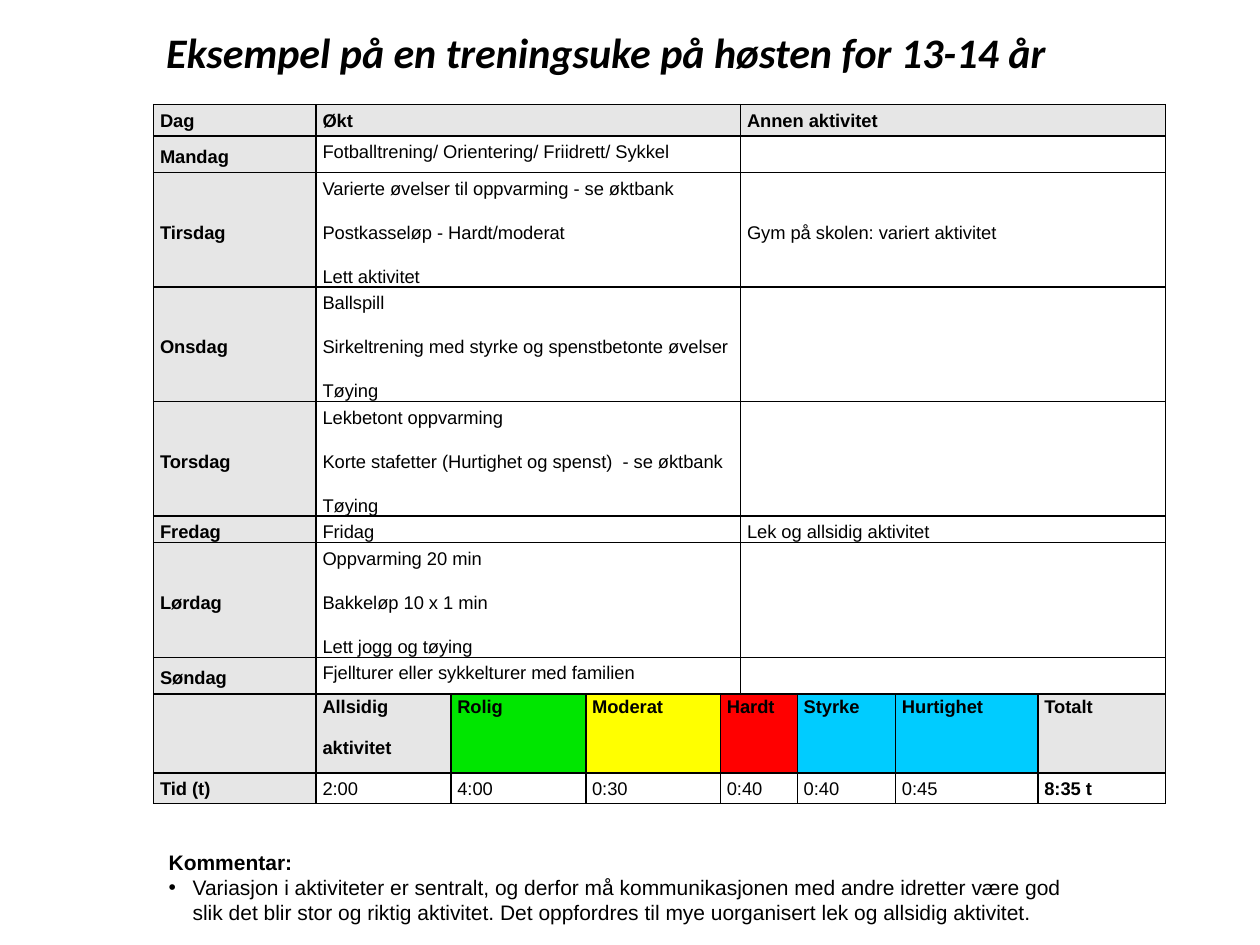
from lxml.etree import SubElement
from pptx import Presentation
from pptx.dml.color import RGBColor
from pptx.enum.text import MSO_ANCHOR as Anchor, PP_ALIGN as Align
from pptx.oxml.ns import qn
from pptx.util import Inches, Pt

GREY = "E6E6E6"
COLUMN_WIDTHS = [1.29, 1.07, 1.07, 1.07, 0.16, 0.45, 0.78, 1.13, 1.01]
DAYS = [
    ("Mandag", 0.29, ["Fotballtrening/ Orientering/ Friidrett/ Sykkel"], ""),
    ("Tirsdag", 0.76, ["Varierte øvelser til oppvarming - se øktbank",
                       "Postkasseløp - Hardt/moderat", "Lett aktivitet "],
     "Gym på skolen: variert aktivitet"),
    ("Onsdag", 0.76, ["Ballspill", "Sirkeltrening med styrke og spenstbetonte øvelser",
                      "Tøying"], ""),
    ("Torsdag", 0.76, ["Lekbetont oppvarming",
                       "Korte stafetter (Hurtighet og spenst)  - se øktbank",
                       "Tøying"], ""),
    ("Fredag", 0.14, ["Fridag"], "Lek og allsidig aktivitet"),
    ("Lørdag", 0.61, ["Oppvarming 20 min", "Bakkeløp 10 x 1 min",
                      "Lett jogg og tøying"], ""),
    ("Søndag", 0.29, ["Fjellturer eller sykkelturer med familien"], ""),
]
INTENSITIES = [
    (1, ["Allsidig", "aktivitet"], GREY, "2:00"),
    (2, ["Rolig"], "00E600", "4:00"),
    (3, ["Moderat"], "FFFF00", "0:30"),
    (4, ["Hardt"], "FF0000", "0:40"),
    (6, ["Styrke"], "00CCFF", "0:40"),
    (7, ["Hurtighet"], "00CCFF", "0:45"),
    (8, ["Totalt"], GREY, "8:35 t"),
]


def color(hex_code):
    return RGBColor.from_string(hex_code)


def write(paragraph, text, size, font="Arial", bold=False, italic=False,
          align=Align.LEFT, line_spacing=None, space_before=None):
    paragraph.alignment = align
    paragraph.line_spacing = line_spacing
    if space_before is not None:
        paragraph.space_before = Pt(space_before)
    run = paragraph.add_run()
    run.text = text
    run.font.size = Pt(size)
    run.font.name = font
    run.font.bold = bold
    run.font.italic = italic
    run.font.color.rgb = color("000000")


def prepare_cell(cell):
    cell.margin_left = cell.margin_right = Inches(0.05)
    cell.margin_top = cell.margin_bottom = 0
    properties = cell._tc.get_or_add_tcPr()
    for side in ("lnL", "lnR", "lnT", "lnB"):
        border = SubElement(properties, qn(f"a:{side}"), w=str(Pt(1)))
        ink = SubElement(border, qn("a:solidFill"))
        SubElement(ink, qn("a:srgbClr"), val="000000")
    cell.fill.background()
    empty_text = cell.text_frame.paragraphs[0]._p
    SubElement(empty_text, qn("a:endParaRPr"), sz="1050")


def fill_cell(cell, lines, fill=None, anchor=Anchor.TOP, bold=False, line_spacing=1.3):
    if fill:
        cell.fill.solid()
        cell.fill.fore_color.rgb = color(fill)
    cell.vertical_anchor = anchor
    frame = cell.text_frame
    for index, line in enumerate(lines):
        paragraph = frame.add_paragraph() if index else frame.paragraphs[0]
        write(paragraph, line, 10.5, bold=bold, align=Align.JUSTIFY,
              line_spacing=line_spacing, space_before=10)


def add_week_table(slide, left, top, width, height):
    row_heights = [0.25] + [day[1] for day in DAYS] + [0.63, 0.24]
    week = slide.shapes.add_table(len(row_heights), len(COLUMN_WIDTHS),
                                  left, top, width, height).table
    week.first_row = week.horz_banding = False
    for column, column_width in zip(week.columns, COLUMN_WIDTHS):
        column.width = Inches(column_width)
    for row, row_height in zip(week.rows, row_heights):
        row.height = Inches(row_height)
    for cell in week.iter_cells():
        prepare_cell(cell)

    intensity_row = len(DAYS) + 1
    time_row = intensity_row + 1
    for row in range(intensity_row):
        week.cell(row, 1).merge(week.cell(row, 4))
        week.cell(row, 5).merge(week.cell(row, 8))
    for row in (intensity_row, time_row):
        week.cell(row, 4).merge(week.cell(row, 5))

    for column, heading in ((0, "Dag"), (1, "Økt "), (5, "Annen aktivitet")):
        fill_cell(week.cell(0, column), [heading], GREY, bold=True)
    for row, (day, _, sessions, other) in enumerate(DAYS, 1):
        fill_cell(week.cell(row, 0), [day], GREY, Anchor.MIDDLE, bold=True)
        fill_cell(week.cell(row, 1), sessions)
        if other:
            fill_cell(week.cell(row, 5), [other], anchor=Anchor.MIDDLE)

    fill_cell(week.cell(intensity_row, 0), [], GREY)
    fill_cell(week.cell(time_row, 0), ["Tid (t)"], GREY, bold=True)
    for column, label, fill, duration in INTENSITIES:
        fill_cell(week.cell(intensity_row, column), label, fill, bold=True,
                  line_spacing=1.15)
        fill_cell(week.cell(time_row, column), [duration], bold=label == ["Totalt"])


def add_title(slide, left, top, width, height):
    frame = slide.shapes.add_textbox(left, top, width, height).text_frame
    frame.word_wrap = True
    write(frame.paragraphs[0], "Eksempel på en treningsuke på høsten for 13-14 år",
          24, font="Calibri", bold=True, italic=True)


def add_comment(slide, left, top, width, height):
    frame = slide.shapes.add_textbox(left, top, width, height).text_frame
    frame.word_wrap = True
    write(frame.paragraphs[0], "Kommentar:", 12, bold=True)
    advice = frame.add_paragraph()
    write(advice, "Variasjon i aktiviteter er sentralt, og derfor må kommunikasjonen "
          "med andre idretter være god slik det blir stor og riktig aktivitet. "
          "Det oppfordres til mye uorganisert lek og allsidig aktivitet.", 12)
    properties = advice._p.get_or_add_pPr()
    properties.set("marL", str(Inches(0.19)))
    properties.set("indent", str(-Inches(0.19)))
    SubElement(properties, qn("a:buFont"), typeface="Arial")
    SubElement(properties, qn("a:buChar"), char="•")


def main():
    presentation = Presentation()
    presentation.slide_width = Inches(10)
    presentation.slide_height = Inches(7.5)
    slide = presentation.slides.add_slide(presentation.slide_layouts[6])
    add_week_table(slide, Inches(1.22), Inches(0.83), Inches(8.03), Inches(5.76))
    add_comment(slide, Inches(1.24), Inches(6.69), Inches(7.48), Inches(1.01))
    add_title(slide, Inches(1.22), Inches(0.16), Inches(8.03), Inches(0.91))
    presentation.save("out.pptx")


if __name__ == "__main__":
    main()
